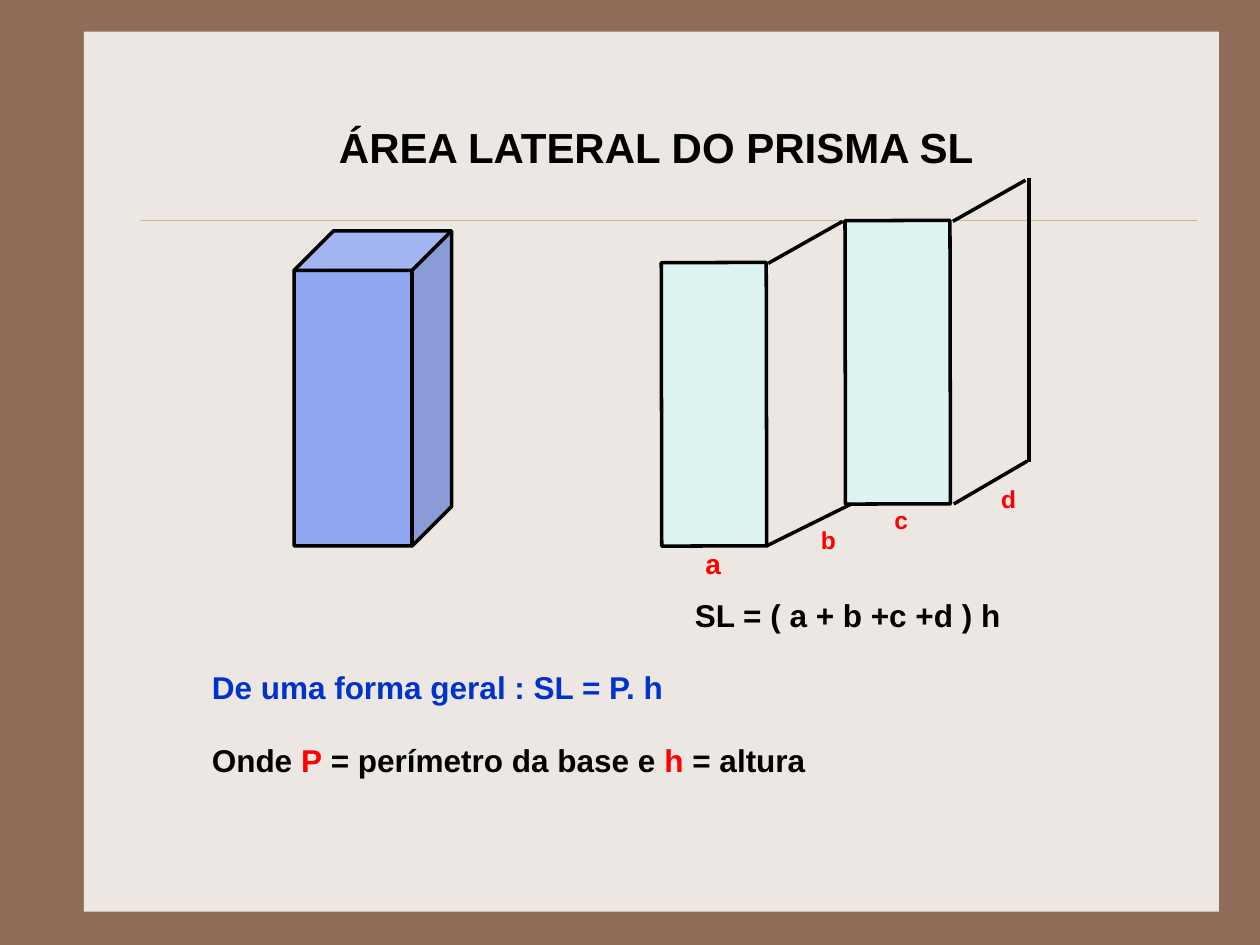
from lxml.etree import SubElement
from pptx import Presentation
from pptx.dml.color import RGBColor
from pptx.enum.shapes import MSO_CONNECTOR as Connector, MSO_SHAPE as Preset
from pptx.enum.text import MSO_AUTO_SIZE as AutoSize, PP_ALIGN as Align
from pptx.oxml.ns import qn
from pptx.util import Pt

BROWN = RGBColor(0x90, 0x6D, 0x58)
CREAM = RGBColor(0xED, 0xE7, 0xE3)
GOLD = RGBColor(0xCB, 0xBD, 0x83)
BLACK = RGBColor(0x00, 0x00, 0x00)
RED = RGBColor(0xFF, 0x00, 0x00)
BLUE = RGBColor(0x00, 0x33, 0xCC)
PRISM_BLUE = RGBColor(0x33, 0x66, 0xFF)
PALE_CYAN = RGBColor(0xCC, 0xFF, 0xFF)


class PrismSlide:
    """Draw the elements of the prism slide in one shared style."""

    font_format = {"name": "Arial", "bold": True}
    stroke = 2

    def __init__(self, page):
        self.page = page
        page.background.fill.solid()
        page.background.fill.fore_color.rgb = BROWN

    def solid(self, preset, left, top, width, height, color, opacity=100, outlined=True, rotation=0):
        shape = self.page.shapes.add_shape(preset, Pt(left), Pt(top), Pt(width), Pt(height))
        shape.shadow.inherit = False
        shape.rotation = rotation
        shape.fill.solid()
        shape.fill.fore_color.rgb = color
        if opacity < 100:
            tone = shape.element.spPr.find(qn("a:solidFill"))[0]
            SubElement(tone, qn("a:alpha")).set("val", str(opacity * 1000))
        if outlined:
            shape.line.color.rgb = BLACK
            shape.line.width = Pt(self.stroke)
        else:
            shape.line.fill.background()
        return shape

    def line(self, start, end, color=BLACK, width=stroke):
        points = [Pt(value) for value in (*start, *end)]
        connector = self.page.shapes.add_connector(Connector.STRAIGHT, *points)
        connector.line.color.rgb = color
        connector.line.width = Pt(width)
        SubElement(connector.element.spPr, qn("a:effectLst"))

    def text(self, left, top, width, height, size, spans, align=Align.JUSTIFY):
        box = self.page.shapes.add_textbox(Pt(left), Pt(top), Pt(width), Pt(height))
        frame = box.text_frame
        frame.word_wrap = True
        frame.auto_size = AutoSize.SHAPE_TO_FIT_TEXT
        para = frame.paragraphs[0]
        para.alignment = align
        for words, color in spans:
            span = para.add_run()
            span.text = words
            for key, value in {**self.font_format, "size": Pt(size)}.items():
                setattr(span.font, key, value)
            span.font.color.rgb = color


def main():
    deck = Presentation()
    deck.slide_width, deck.slide_height = Pt(720), Pt(540)
    slide = PrismSlide(deck.slides.add_slide(deck.slide_layouts[6]))

    slide.solid(Preset.RECTANGLE, 48, 18, 648.5, 503, CREAM, outlined=False)
    slide.line((80, 126), (684, 126), GOLD, 0.25)
    slide.text(132, 66, 486, 36, 24, [("ÁREA LATERAL DO PRISMA SL", BLACK)], Align.CENTER)

    prism = slide.solid(Preset.CUBE, 168, 132, 90, 180, PRISM_BLUE, 50)
    prism.adjustments[0] = 0.25

    for left, top in ((378, 150), (483, 126)):
        slide.solid(Preset.RECTANGLE, left, top, 60, 162, PALE_CYAN, 50, rotation=359.9)
    for start, end in (
        ((439, 150.5), (481.5, 126.5)),
        ((438, 312), (486.5, 288)),
        ((545, 288), (587, 263.5)),
        ((544.5, 126.5), (586, 103)),
        ((588, 102), (588, 264)),
    ):
        slide.line(start, end)
    for letter, left, top, width, height, size in (
        ("a", 396, 309, 30, 26.5, 16),
        ("b", 462, 296.5, 24, 24, 14),
        ("c", 504, 285, 24, 24, 14),
        ("d", 565, 273, 36, 24, 14),
    ):
        slide.text(left, top, width, height, size, [(letter, RED)])

    height_note = [
        ("Onde ", BLACK),
        ("P", RED),
        (" = perímetro da base e ", BLACK),
        ("h", RED),
        (" = altura", BLACK),
    ]
    for left, top, width, spans in (
        (390, 337, 288, [("SL = ( a + b +c +d ) h", BLACK)]),
        (114, 378, 432, [("De uma forma geral : SL = P. h", BLUE)]),
        (114, 420, 432, height_note),
    ):
        slide.text(left, top, width, 29, 18, spans)

    deck.save("out.pptx")


if __name__ == "__main__":
    main()
